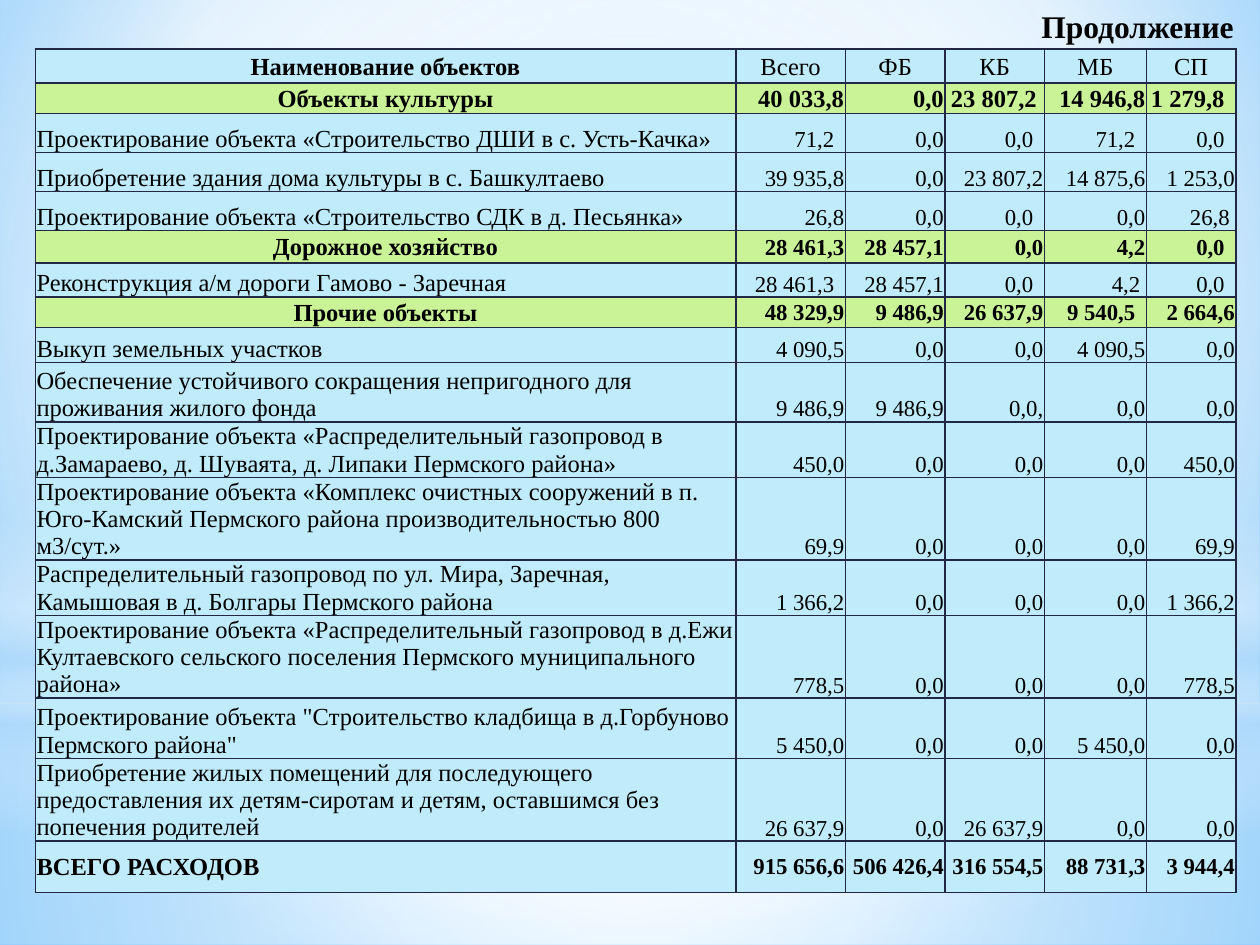
from typing import NamedTuple

from lxml import etree
from pptx import Presentation
from pptx.dml.color import RGBColor
from pptx.enum.shapes import MSO_SHAPE
from pptx.enum.text import MSO_ANCHOR, PP_ALIGN
from pptx.oxml import parse_xml
from pptx.oxml.ns import nsdecls, qn
from pptx.util import Inches, Pt

RECT, OVAL = MSO_SHAPE.RECTANGLE, MSO_SHAPE.OVAL
LEFT, CENTER, RIGHT = PP_ALIGN.LEFT, PP_ALIGN.CENTER, PP_ALIGN.RIGHT
MIDDLE, BOTTOM = MSO_ANCHOR.MIDDLE, MSO_ANCHOR.BOTTOM

FONT = "Times New Roman"
COLORS = {
    "text": "000000", "border": "212745", "plain": "BFEBFA", "section": "CAF297",
    "white": "FFFFFF", "haze": "B4DCFA", "sky": "9ED5FF", "deep": "5BB9FF",
}
COLUMN_WIDTHS = [5.56, 0.87, 0.79, 0.79, 0.81, 0.71]
INSET = 0.01
WIDE, HALF = 0.09, 0.05  # right insets of amounts set off from the border


class Stop(NamedTuple):
    position: int
    color: str
    opacity: int = 100


class Glow(NamedTuple):
    preset: int
    box: tuple[float, float, float, float]
    stops: list[Stop]
    focus: tuple[int, int, int, int] | None


class Line(NamedTuple):
    kind: str  # header, section, item or total
    height: float
    name: str
    amounts: str
    insets: dict[int, float] = {}  # column number -> right inset
    amount_size: int = 13


MID = (50, 50, 50, 50)
GLOWS = [
    Glow(RECT, (0, 5.58, 10, 1.92),
         [Stop(0, "white", 91), Stop(37, "white", 76), Stop(100, "haze", 79)], MID),
    Glow(RECT, (0, 0, 10, 5.58),
         [Stop(0, "white", 89), Stop(48, "white", 62), Stop(100, "haze", 79)], MID),
    Glow(RECT, (0, 4.12, 10, 2.5),
         [Stop(0, "white", 0), Stop(29, "white", 30), Stop(45, "haze", 40),
          Stop(55, "white", 26), Stop(65, "haze", 60), Stop(100, "white", 0)], None),
    Glow(OVAL, (0, 1.75, 10, 5.58), [Stop(0, "white"), Stop(56, "white", 0)], MID),
]

LINES = [
    Line("header", 0.27, "Наименование объектов", "Всего|ФБ|КБ|МБ|СП", amount_size=14),
    Line("section", 0.24, "Объекты культуры", "40 033,8|0,0|23 807,2|14 946,8|1 279,8",
         {3: 0.06, 5: WIDE}, 14),
    Line("item", 0.31, "Проектирование объекта «Строительство ДШИ в с. Усть-Качка»",
         "71,2|0,0|0,0|71,2|0,0", {1: WIDE, 3: WIDE, 4: WIDE, 5: WIDE}),
    Line("item", 0.31, "Приобретение здания дома культуры в с. Башкултаево",
         "39 935,8|0,0|23 807,2|14 875,6|1 253,0"),
    Line("item", 0.31, "Проектирование объекта «Строительство СДК в д. Песьянка»",
         "26,8|0,0|0,0|0,0|26,8", {3: WIDE, 5: HALF}),
    Line("section", 0.26, "Дорожное хозяйство", "28 461,3|28 457,1|0,0|4,2|0,0", {5: WIDE}),
    Line("item", 0.27, "Реконструкция а/м дороги Гамово - Заречная",
         "28 461,3|28 457,1|0,0|4,2|0,0", {1: WIDE, 3: WIDE, 4: HALF, 5: WIDE}),
    Line("section", 0.24, "Прочие объекты", "48 329,9|9 486,9|26 637,9|9 540,5|2 664,6",
         {4: WIDE}),
    Line("item", 0.28, "Выкуп земельных участков", "4 090,5|0,0|0,0|4 090,5|0,0"),
    Line("item", 0.47, "Обеспечение устойчивого сокращения непригодного для проживания "
         "жилого фонда", "9 486,9|9 486,9|0,0,|0,0|0,0"),
    Line("item", 0.43, "Проектирование объекта «Распределительный газопровод в д.Замараево, "
         "д. Шуваята, д. Липаки Пермского района»", "450,0|0,0|0,0|0,0|450,0"),
    Line("item", 0.65, "Проектирование объекта «Комплекс очистных сооружений в п. Юго-Камский "
         "Пермского района производительностью 800 м3/сут.»", "69,9|0,0|0,0|0,0|69,9"),
    Line("item", 0.43, "Распределительный газопровод по ул. Мира, Заречная, Камышовая "
         "в д. Болгары Пермского района", "1 366,2|0,0|0,0|0,0|1 366,2"),
    Line("item", 0.65, "Проектирование объекта «Распределительный газопровод в д.Ежи "
         "Култаевского сельского поселения Пермского муниципального района»",
         "778,5|0,0|0,0|0,0|778,5"),
    Line("item", 0.48, 'Проектирование объекта "Строительство кладбища в д.Горбуново '
         'Пермского района"', "5 450,0|0,0|0,0|5 450,0|0,0"),
    Line("item", 0.65, "Приобретение жилых помещений для последующего предоставления их "
         "детям-сиротам и детям, оставшимся без попечения родителей",
         "26 637,9|0,0|26 637,9|0,0|0,0"),
    Line("total", 0.41, "ВСЕГО РАСХОДОВ", "915 656,6|506 426,4|316 554,5|88 731,3|3 944,4"),
]


def paint_gradient(owner, fill, stops: list[Stop], focus) -> None:
    """Circular gradient around focus, or a vertical one when focus is None."""
    fill.gradient()
    gradient = owner.element.find(".//" + qn("a:gradFill"))
    stop_xml = "".join(
        f'<a:gs pos="{s.position * 1000}"><a:srgbClr val="{COLORS[s.color]}">'
        f'<a:alpha val="{s.opacity * 1000}"/></a:srgbClr></a:gs>' for s in stops)
    if focus:
        sides = " ".join(f'{side}="{v * 1000}"' for side, v in zip("ltrb", focus))
        shade = f'<a:path path="circle"><a:fillToRect {sides}/></a:path>'
    else:
        shade = '<a:lin ang="5400000" scaled="0"/>'
    gradient.getparent().replace(gradient, parse_xml(
        f'<a:gradFill {nsdecls("a")} rotWithShape="1"><a:gsLst>{stop_xml}</a:gsLst>'
        f'{shade}</a:gradFill>'))


def write(paragraph, text: str, size: int, bold: bool, align) -> None:
    paragraph.alignment = align
    run = paragraph.add_run()
    run.text = text
    run.font.name, run.font.size, run.font.bold = FONT, Pt(size), bold
    run.font.color.rgb = RGBColor.from_string(COLORS["text"])


def draw_borders(cell) -> None:
    properties = cell._tc.get_or_add_tcPr()
    for index, side in enumerate(("lnL", "lnR", "lnT", "lnB")):
        border = etree.Element(qn(f"a:{side}"), w=str(Pt(1)))
        solid = etree.SubElement(border, qn("a:solidFill"))
        etree.SubElement(solid, qn("a:srgbClr"), val=COLORS["border"])
        properties.insert(index, border)


def fill_line(table, row: int, line: Line) -> None:
    table.rows[row].height = Inches(line.height)
    for column, text in enumerate([line.name, *line.amounts.split("|")]):
        cell = table.cell(row, column)
        cell.margin_left = cell.margin_top = Inches(INSET)
        cell.margin_bottom = 0
        cell.margin_right = Inches(line.insets.get(column, INSET))
        cell.vertical_anchor = BOTTOM if line.kind == "item" else MIDDLE
        cell.fill.solid()
        shade = "section" if line.kind == "section" else "plain"
        cell.fill.fore_color.rgb = RGBColor.from_string(COLORS[shade])
        draw_borders(cell)
        is_name = column == 0
        if line.kind == "header" or (is_name and line.kind == "section"):
            align = CENTER
        else:
            align = LEFT if is_name else RIGHT
        bold = line.kind in ("section", "total") or (line.kind == "header" and is_name)
        write(cell.text_frame.paragraphs[0], text,
              14 if is_name else line.amount_size, bold, align)


def main() -> None:
    prs = Presentation()
    prs.slide_width, prs.slide_height = Inches(10), Inches(7.5)
    slide = prs.slides.add_slide(prs.slide_layouts[6])

    # Sky background with soft glows
    paint_gradient(slide, slide.background.fill,
                   [Stop(0, "sky"), Stop(60, "white"), Stop(100, "deep")], (20, 10, 20, 60))
    for glow in GLOWS:
        shape = slide.shapes.add_shape(glow.preset, *map(Inches, glow.box))
        shape.shadow.inherit = False
        shape.line.fill.background()
        paint_gradient(shape, shape.fill, glow.stops, glow.focus)

    # Expenditure table
    table = slide.shapes.add_table(
        len(LINES), len(COLUMN_WIDTHS), Inches(0.28), Inches(0.39),
        Inches(sum(COLUMN_WIDTHS)), Inches(sum(line.height for line in LINES))).table
    table.first_row = table.horz_banding = False
    for column, width in zip(table.columns, COLUMN_WIDTHS):
        column.width = Inches(width)
    for row, line in enumerate(LINES):
        fill_line(table, row, line)

    # Continuation heading
    heading = slide.shapes.add_textbox(Inches(0.2), Inches(0.01), Inches(9.69), Inches(0.4))
    heading.text_frame.word_wrap = True
    write(heading.text_frame.paragraphs[0], "Продолжение", 18, True, RIGHT)

    prs.save("out.pptx")


if __name__ == "__main__":
    main()
